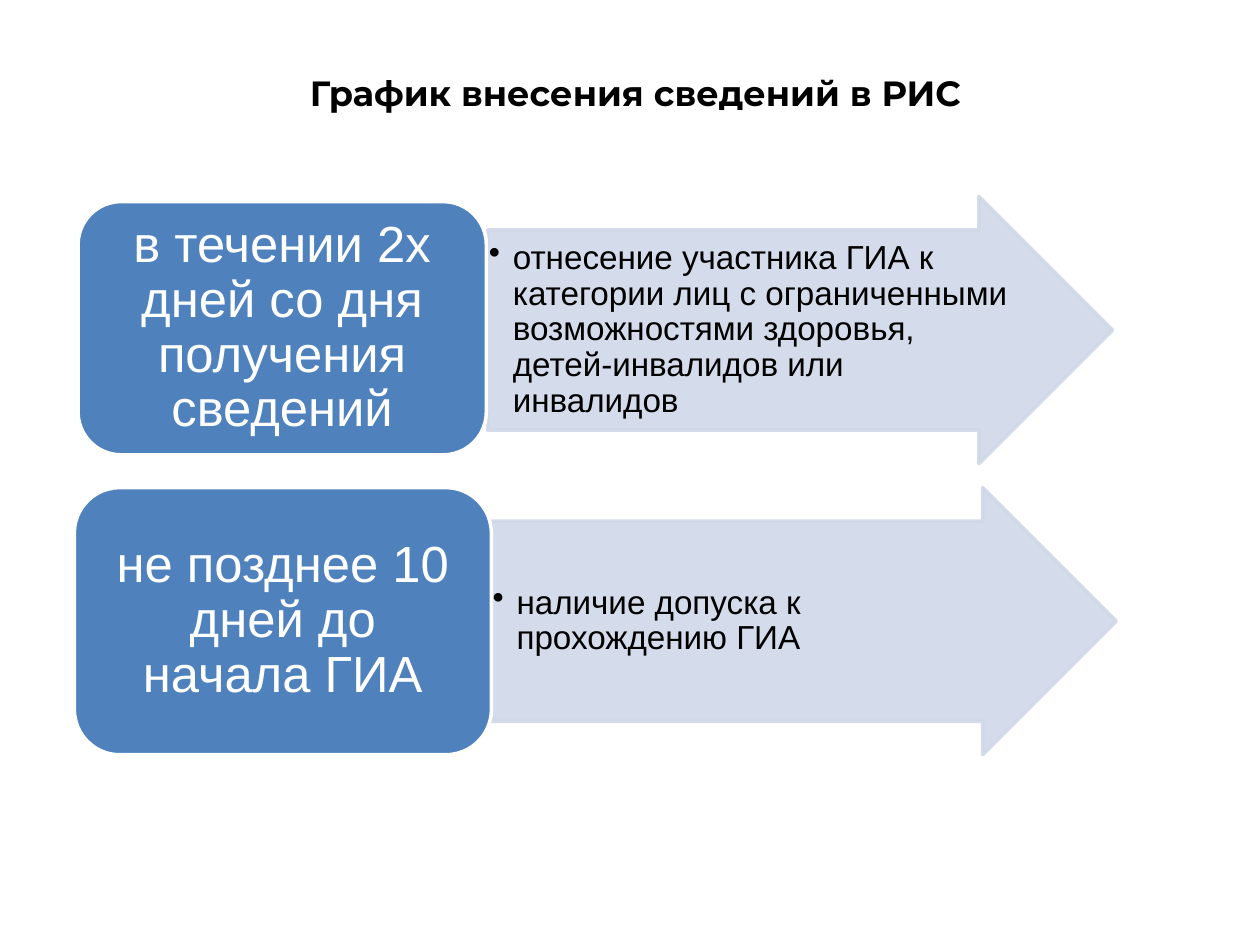
from dataclasses import dataclass
from typing import Any

from lxml import etree
from pptx import Presentation
from pptx.dml.color import RGBColor
from pptx.enum.shapes import MSO_SHAPE
from pptx.enum.text import MSO_ANCHOR, MSO_AUTO_SIZE, PP_ALIGN
from pptx.oxml.ns import qn
from pptx.util import Inches, Pt

ARROW = MSO_SHAPE.RIGHT_ARROW
ROUNDED = MSO_SHAPE.ROUNDED_RECTANGLE
MIDDLE, TOP = MSO_ANCHOR.MIDDLE, MSO_ANCHOR.TOP
CENTER, LEFT = PP_ALIGN.CENTER, PP_ALIGN.LEFT
GROW = MSO_AUTO_SIZE.SHAPE_TO_FIT_TEXT

BLACK = RGBColor(0x00, 0x00, 0x00)
WHITE = RGBColor(0xFF, 0xFF, 0xFF)
BLUE = RGBColor(0x4F, 0x81, 0xBD)
PALE = RGBColor(0xD0, 0xD8, 0xE8)

WIDTH, HEIGHT = Inches(10), Inches(7.5)
COLUMNS, ROWS = 100, 75
ARROW_SHAFT, ARROW_HEAD = 0.75, 0.5
CORNER, CORNER_INSET = 0.17, 0.05
BULLET_INDENT = Inches(0.19)


@dataclass(frozen=True)
class Frame:
    """A rectangle in grid columns and rows."""

    column: float
    row: float
    columns: float
    rows: float

    def lengths(self) -> tuple[int, int, int, int]:
        """Return left, top, width and height in slide units."""
        across, down = WIDTH / COLUMNS, HEIGHT / ROWS
        return (round(self.column * across), round(self.row * down),
                round(self.columns * across), round(self.rows * down))

    def arrow_text(self) -> "Frame":
        """Return the text area of an arrow with this frame."""
        margin = (1 - ARROW_SHAFT) / 2
        return Frame(self.column, self.row + margin * self.rows,
                     self.columns - self.rows * ARROW_SHAFT * ARROW_HEAD,
                     self.rows * ARROW_SHAFT)

    def card_text(self) -> "Frame":
        """Return the text area of a rounded card with this frame."""
        inset = CORNER_INSET * self.rows
        return Frame(self.column + inset, self.row + inset,
                     self.columns - 2 * inset, self.rows - 2 * inset)


@dataclass(frozen=True)
class Style:
    """The format of a text box."""

    font: dict[str, Any]
    color: RGBColor
    para: dict[str, Any]
    frame: dict[str, Any]
    bullet: bool = False


@dataclass(frozen=True)
class Step:
    """A deadline card and the arrow that leads from it."""

    deadline: str
    details: str
    card: Frame
    arrow: Frame


def margins(side: float, end: float) -> dict[str, Any]:
    """Return frame values for a middle-anchored box."""
    return {"vertical_anchor": MIDDLE,
            "margin_left": Inches(side), "margin_right": Inches(side),
            "margin_top": Inches(end), "margin_bottom": Inches(end)}


TITLE = "График внесения сведений в РИС"
TITLE_FRAME = Frame(9.1, 5.2, 82.7, 4.4)
TITLE_STYLE = Style({"name": "Montserrat", "size": Pt(20), "bold": True}, BLACK,
                    {"alignment": CENTER},
                    {"vertical_anchor": TOP, "auto_size": GROW})
CARD_STYLE = Style({"name": "Arial", "size": Pt(29)}, WHITE,
                   {"alignment": CENTER, "line_spacing": 0.9},
                   margins(0.12, 0.06))
DETAIL_STYLE = Style({"name": "Arial", "size": Pt(19)}, BLACK,
                     {"alignment": LEFT, "line_spacing": 0.9, "level": 1},
                     margins(0.01, 0.01), bullet=True)

STEPS = (
    Step("в течении 2х дней со дня получения сведений",
         "отнесение участника ГИА к категории лиц с ограниченными "
         "возможностями здоровья, детей-инвалидов или инвалидов",
         Frame(6.2, 16, 32.4, 20.1), Frame(38.7, 15.6, 49.6, 21.2)),
    Step("не позднее 10 дней до начала ГИА",
         "наличие допуска к прохождению ГИА",
         Frame(5.9, 38.7, 33.1, 21.2), Frame(39, 38.7, 49.6, 21.2)),
)


def apply(target: Any, values: dict[str, Any]) -> None:
    """Set each format value on the target."""
    for name, value in values.items():
        setattr(target, name, value)


def add_bullet(para: Any) -> None:
    """Give a paragraph a hanging round bullet."""
    properties = para._p.get_or_add_pPr()
    properties.set("marL", str(BULLET_INDENT))
    properties.set("indent", str(-BULLET_INDENT))
    etree.SubElement(properties, qn("a:buChar")).set("char", "•")


def add_text(page: Any, text: str, frame: Frame, style: Style) -> None:
    """Add a wrapped text box."""
    box = page.shapes.add_textbox(*frame.lengths()).text_frame
    box.word_wrap = True
    apply(box, style.frame)
    para = box.paragraphs[0]
    apply(para, style.para)
    if style.bullet:
        add_bullet(para)
    span = para.add_run()
    span.text = text
    apply(span.font, style.font)
    span.font.color.rgb = style.color


def add_block(page: Any, preset: Any, frame: Frame, fill: RGBColor,
              line: RGBColor, adjustments: tuple[float, ...],
              opacity: int = 100) -> None:
    """Add a filled and outlined preset shape."""
    shape = page.shapes.add_shape(preset, *frame.lengths())
    shape.shadow.inherit = False
    for index, value in enumerate(adjustments):
        shape.adjustments[index] = value
    shape.fill.solid()
    shape.fill.fore_color.rgb = fill
    shape.line.color.rgb = line
    shape.line.width = Pt(2)
    if opacity < 100:
        for color in shape._element.spPr.iter(qn("a:srgbClr")):
            etree.SubElement(color, qn("a:alpha")).set("val", str(opacity * 1000))


def add_step(page: Any, step: Step) -> None:
    """Add one arrow and its deadline card."""
    add_block(page, ARROW, step.arrow, PALE, PALE, (ARROW_SHAFT, ARROW_HEAD), 90)
    add_text(page, step.details, step.arrow.arrow_text(), DETAIL_STYLE)
    add_block(page, ROUNDED, step.card, BLUE, WHITE, (CORNER,))
    add_text(page, step.deadline, step.card.card_text(), CARD_STYLE)


def main() -> None:
    """Build and save the deck."""
    deck = Presentation()
    apply(deck, {"slide_width": WIDTH, "slide_height": HEIGHT})
    page = deck.slides.add_slide(deck.slide_layouts[6])
    add_text(page, TITLE, TITLE_FRAME, TITLE_STYLE)
    for step in STEPS:
        add_step(page, step)
    deck.save("out.pptx")


if __name__ == "__main__":
    main()
